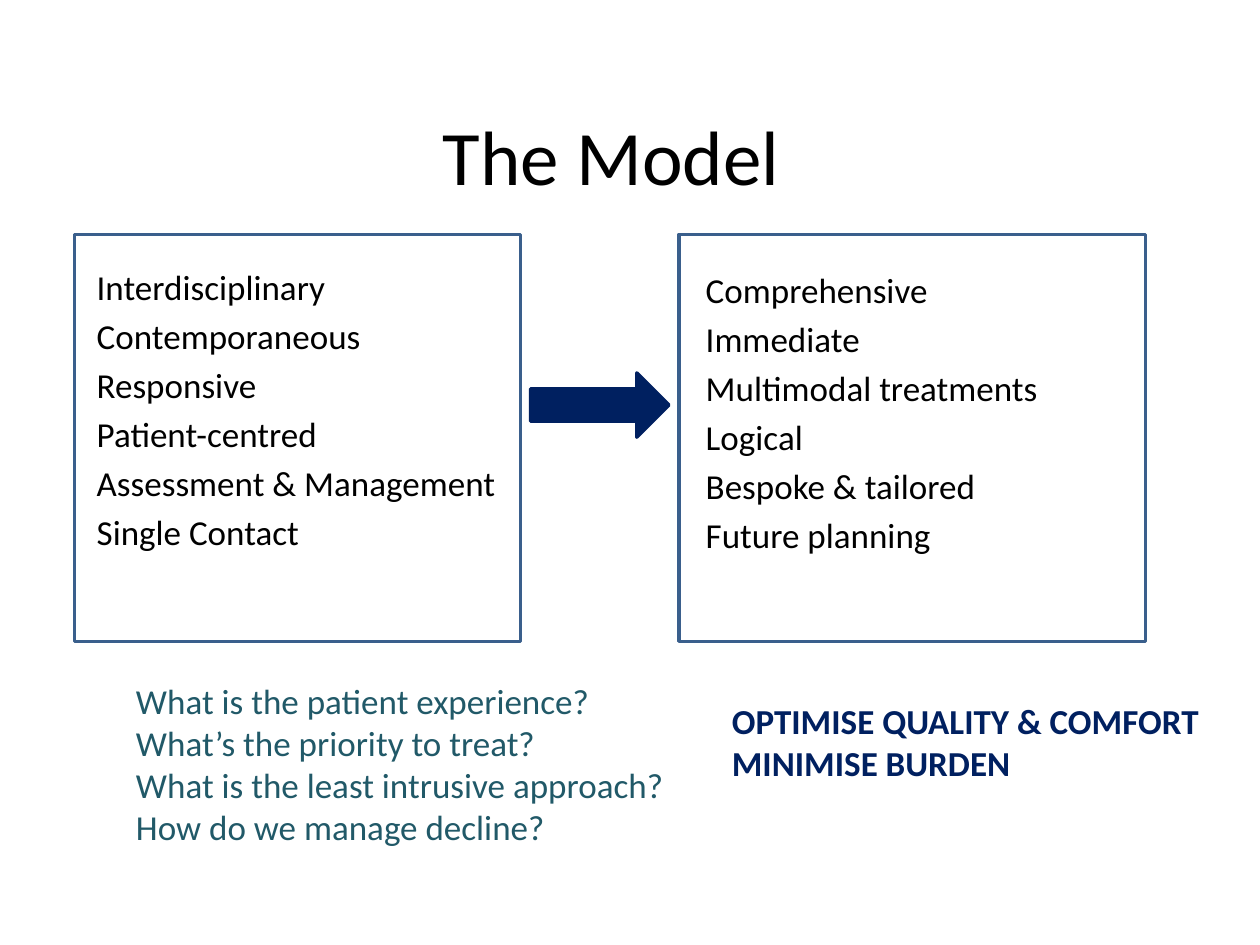
from dataclasses import dataclass

from pptx import Presentation
from pptx.dml.color import RGBColor
from pptx.enum.shapes import MSO_SHAPE
from pptx.enum.text import MSO_ANCHOR, PP_ALIGN
from pptx.util import Pt

RECTANGLE = MSO_SHAPE.RECTANGLE
RIGHT_ARROW = MSO_SHAPE.RIGHT_ARROW
TOP, MIDDLE = MSO_ANCHOR.TOP, MSO_ANCHOR.MIDDLE
LEFT, CENTER = PP_ALIGN.LEFT, PP_ALIGN.CENTER
BLANK_LAYOUT = 6


@dataclass(frozen=True)
class Theme:
    font: str = "Calibri"
    title_size: int = 44
    body_size: int = 20
    line_width: int = 2
    item_gap: int = 4
    black: RGBColor = RGBColor(0x00, 0x00, 0x00)
    panel_line: RGBColor = RGBColor(0x3A, 0x5F, 0x8C)
    navy: RGBColor = RGBColor(0x00, 0x20, 0x60)
    teal: RGBColor = RGBColor(0x21, 0x59, 0x68)


THEME = Theme()

TITLE = "The Model"
APPROACH = [
    "Interdisciplinary",
    "Contemporaneous",
    "Responsive",
    "Patient-centred",
    "Assessment & Management",
    "Single Contact",
]
CARE = [
    "Comprehensive",
    "Immediate",
    "Multimodal treatments",
    "Logical",
    "Bespoke & tailored",
    "Future planning",
]
QUESTIONS = [
    "What is the patient experience?",
    "What’s the priority to treat?",
    "What is the least intrusive approach?",
    "How do we manage decline?",
]
GOALS = ["OPTIMISE QUALITY & COMFORT", "MINIMISE BURDEN"]

# Left, top, width, height in points
TITLE_BOX = (25.2, 43.2, 648, 90)
APPROACH_PANEL = (42.5, 133.9, 254.9, 232.6)
CARE_PANEL = (388.1, 133.9, 266.4, 232.6)
APPROACH_BOX = (48.2, 148.3, 249.8, 204.5)
CARE_BOX = (396.2, 150, 248, 193)
QUESTIONS_BOX = (70.6, 384.5, 323.3, 104.4)
GOALS_BOX = (411.1, 396, 294.5, 55.4)
ARROW_HEIGHT = 36.7
ARROW_TOP = 213.1
ARROW_GAP = 5.8


def points(box):
    return [Pt(value) for value in box]


def add_lines(slide, box, lines, color=THEME.black, size=THEME.body_size,
              bold=False, gap=0, align=LEFT, anchor=TOP):
    """Add a text box with one paragraph per line, gap points apart."""
    frame = slide.shapes.add_textbox(*points(box)).text_frame
    frame.word_wrap = True
    frame.vertical_anchor = anchor
    for index, line in enumerate(lines):
        paragraph = frame.add_paragraph() if index else frame.paragraphs[0]
        paragraph.alignment = align
        paragraph.space_before = Pt(gap if index else 0)
        run = paragraph.add_run()
        run.text = line
        run.font.name = THEME.font
        run.font.size = Pt(size)
        run.font.bold = bold
        run.font.color.rgb = color


def add_outlined_shape(slide, kind, box, line, fill=None):
    shape = slide.shapes.add_shape(kind, *points(box))
    shape.shadow.inherit = False
    if fill is None:
        shape.fill.background()
    else:
        shape.fill.solid()
        shape.fill.fore_color.rgb = fill
    shape.line.color.rgb = line
    shape.line.width = Pt(THEME.line_width)


def arrow_between(left_panel, right_panel):
    """Return the box of an arrow that fills the space between two panels."""
    start = left_panel[0] + left_panel[2] + ARROW_GAP
    end = right_panel[0] - ARROW_GAP
    return start, ARROW_TOP, end - start, ARROW_HEIGHT


def main():
    presentation = Presentation()
    presentation.slide_width, presentation.slide_height = Pt(720), Pt(540)
    slide = presentation.slides.add_slide(presentation.slide_layouts[BLANK_LAYOUT])

    add_lines(slide, TITLE_BOX, [TITLE], size=THEME.title_size,
              align=CENTER, anchor=MIDDLE)
    for panel, box, items in ((APPROACH_PANEL, APPROACH_BOX, APPROACH),
                              (CARE_PANEL, CARE_BOX, CARE)):
        add_outlined_shape(slide, RECTANGLE, panel, THEME.panel_line)
        add_lines(slide, box, items, gap=THEME.item_gap)
    add_outlined_shape(slide, RIGHT_ARROW, arrow_between(APPROACH_PANEL, CARE_PANEL),
                       THEME.navy, fill=THEME.navy)
    add_lines(slide, QUESTIONS_BOX, QUESTIONS, color=THEME.teal)
    add_lines(slide, GOALS_BOX, GOALS, color=THEME.navy, bold=True)

    presentation.save("out.pptx")


if __name__ == "__main__":
    main()
